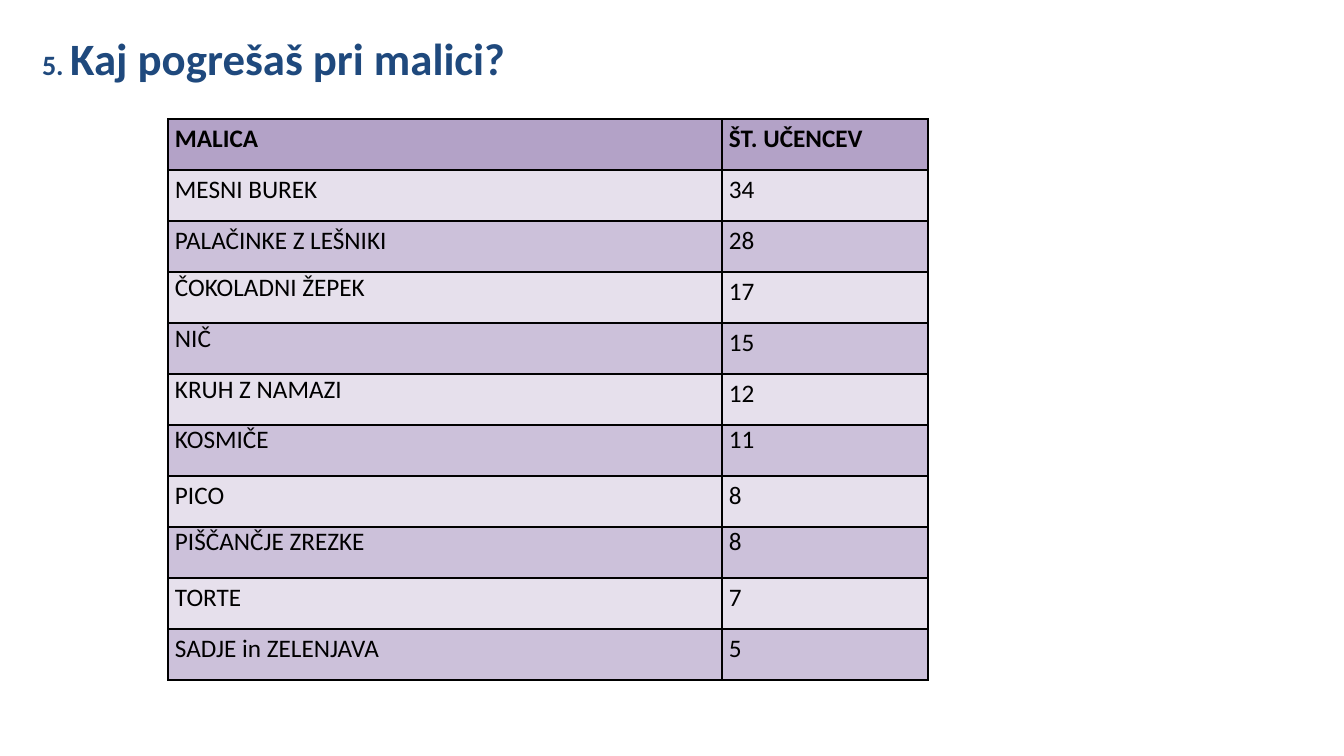
"""Build the survey slide about the snacks that pupils miss."""
from dataclasses import dataclass

from lxml import etree
from pptx import Presentation, util as u
from pptx.dml.color import RGBColor
from pptx.enum import text
from pptx.oxml.ns import qn

SLIDE_WIDTH, SLIDE_HEIGHT = 1344, 756
EMU_PER_PX = 12192000 / SLIDE_WIDTH
FONT = "Calibri"
BLACK = RGBColor(0x00, 0x00, 0x00)
WHITE = RGBColor(0xFF, 0xFF, 0xFF)
NAVY = RGBColor(0x1F, 0x49, 0x7D)
HEADER_PURPLE = RGBColor(0xB3, 0xA2, 0xC7)
BANDS = (RGBColor(0xCC, 0xC1, 0xDA), RGBColor(0xE6, 0xE0, 0xEC))
COLUMN_WIDTHS = (554, 206)
ROW_HEIGHT = 51
LOOSE, SINGLE = 1.15, 1.0


@dataclass(frozen=True)
class SnackRow:
    name: str
    count: str
    name_spacing: float = LOOSE
    count_spacing: float = LOOSE


ROWS = (
    SnackRow("MALICA", "ŠT. UČENCEV"),
    SnackRow("MESNI BUREK", "34"),
    SnackRow("PALAČINKE Z LEŠNIKI", "28"),
    SnackRow("ČOKOLADNI ŽEPEK", "17", SINGLE),
    SnackRow("NIČ", "15", SINGLE),
    SnackRow("KRUH Z NAMAZI", "12", SINGLE),
    SnackRow("KOSMIČE", "11", SINGLE, SINGLE),
    SnackRow("PICO", "8"),
    SnackRow("PIŠČANČJE ZREZKE", "8", SINGLE, SINGLE),
    SnackRow("TORTE", "7"),
    SnackRow("SADJE in ZELENJAVA", "5"),
)


def px(length: int) -> u.Emu:
    return u.Emu(round(length * EMU_PER_PX))


def add_borders(cell) -> None:
    properties = cell._tc.get_or_add_tcPr()
    for index, side in enumerate(("a:lnL", "a:lnR", "a:lnT", "a:lnB")):
        line = etree.Element(qn(side), w=str(u.Pt(1)))
        fill = etree.SubElement(line, qn("a:solidFill"))
        etree.SubElement(fill, qn("a:srgbClr"), val=str(BLACK))
        properties.insert(index, line)


def fill_cell(cell, content: str, spacing: float, color: RGBColor, bold: bool) -> None:
    cell.text = content
    cell.margin_left = cell.margin_right = px(7)
    cell.margin_top = cell.margin_bottom = 0
    cell.fill.solid()
    cell.fill.fore_color.rgb = color
    paragraph = cell.text_frame.paragraphs[0]
    paragraph.line_spacing = spacing
    paragraph.font.name = FONT
    paragraph.font.size = u.Pt(18)
    paragraph.font.bold = bold
    paragraph.font.color.rgb = BLACK
    add_borders(cell)


def add_snack_table(slide) -> None:
    frame = slide.shapes.add_table(
        len(ROWS), len(COLUMN_WIDTHS), px(168), px(119),
        px(sum(COLUMN_WIDTHS)), px(ROW_HEIGHT * len(ROWS)),
    )
    table = frame.table
    for column, width in zip(table.columns, COLUMN_WIDTHS):
        column.width = px(width)
    for index, row in enumerate(ROWS):
        table.rows[index].height = px(ROW_HEIGHT)
        is_header = index == 0
        color = HEADER_PURPLE if is_header else BANDS[index % 2]
        fill_cell(table.cell(index, 0), row.name, row.name_spacing, color, is_header)
        fill_cell(table.cell(index, 1), row.count, row.count_spacing, color, is_header)


def format_title(title) -> None:
    title.left, title.top, title.width, title.height = px(19), px(26), px(1008), px(65)
    title.fill.solid()
    title.fill.fore_color.rgb = WHITE
    frame = title.text_frame
    frame.word_wrap = True
    frame.auto_size = text.MSO_AUTO_SIZE.SHAPE_TO_FIT_TEXT
    frame.vertical_anchor = text.MSO_ANCHOR.TOP
    frame.margin_left = px(23)
    paragraph = frame.paragraphs[0]
    paragraph.alignment = text.PP_ALIGN.LEFT
    paragraph.font.name = FONT
    paragraph.font.bold = True
    paragraph.font.color.rgb = NAVY
    for content, size in (("5. ", 20), ("Kaj pogrešaš pri malici?", 32)):
        run = paragraph.add_run()
        run.text = content
        run.font.size = u.Pt(size)


def main() -> None:
    presentation = Presentation()
    presentation.slide_width = px(SLIDE_WIDTH)
    presentation.slide_height = px(SLIDE_HEIGHT)
    slide = presentation.slides.add_slide(presentation.slide_layouts[5])
    format_title(slide.shapes.title)
    add_snack_table(slide)
    presentation.save("out.pptx")


if __name__ == "__main__":
    main()
